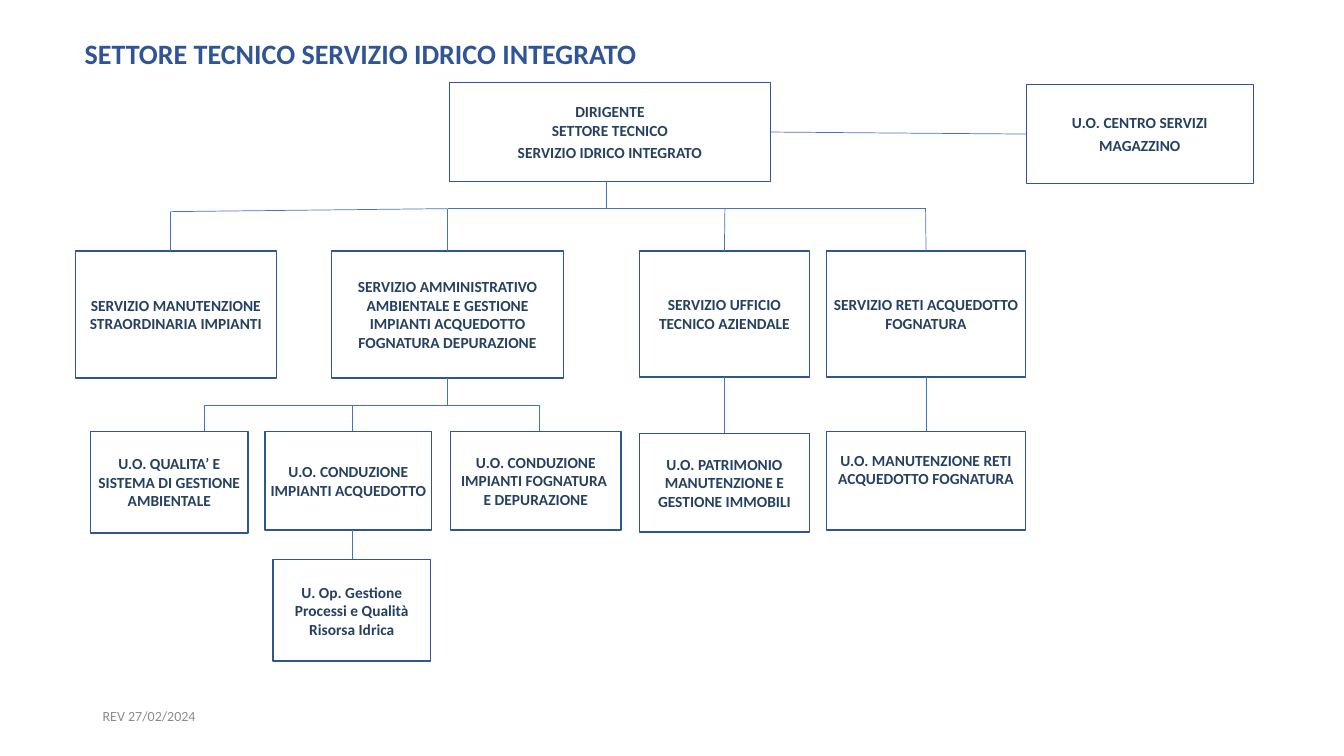
from typing import NamedTuple

from lxml import etree
from pptx import Presentation
from pptx.dml.color import RGBColor
from pptx.enum.shapes import MSO_CONNECTOR, MSO_SHAPE
from pptx.enum.text import MSO_ANCHOR, PP_ALIGN
from pptx.oxml.ns import qn
from pptx.util import Inches, Pt

WHITE = RGBColor(0xFF, 0xFF, 0xFF)
BORDER_BLUE = RGBColor(0x2F, 0x55, 0x97)
LINE_BLUE = RGBColor(0x44, 0x72, 0xC4)
TEXT_NAVY = RGBColor(0x25, 0x40, 0x61)
FOOTER_GRAY = RGBColor(0x8C, 0x8C, 0x8C)
FONT = "Calibri"
TOP, LEFT, BOTTOM, RIGHT = range(4)


class Box(NamedTuple):
    left: float
    top: float
    width: float
    height: float

    def inner(self, left, top, width, height):
        """Box whose left and top are measured from this box."""
        return Box(self.left + left, self.top + top, width, height)

    def point(self, x, y):
        return self.left + x, self.top + y

    def lengths(self):
        return [Inches(value) for value in self]


def style_font(font, size, color, bold):
    font.name = FONT
    font.size = Pt(size)
    font.bold = bold
    font.color.rgb = color


def add_unit(slide, box, text, wrap=True, bottom_inset=0.05):
    """Framed organisation unit; each line of text is a paragraph."""
    shape = slide.shapes.add_shape(MSO_SHAPE.RECTANGLE, *box.lengths())
    shape.shadow.inherit = False
    shape.fill.solid()
    shape.fill.fore_color.rgb = WHITE
    shape.line.color.rgb = BORDER_BLUE
    shape.line.width = Pt(1)
    frame = shape.text_frame
    frame.word_wrap = wrap
    frame.vertical_anchor = MSO_ANCHOR.MIDDLE
    frame.margin_left = frame.margin_right = frame.margin_top = Inches(0.05)
    frame.margin_bottom = Inches(bottom_inset)
    frame.text = text
    for paragraph in frame.paragraphs:
        paragraph.alignment = PP_ALIGN.CENTER
        paragraph.space_after = Pt(3)
        style_font(paragraph.font, 11, TEXT_NAVY, True)
    return shape


def add_line(slide, start, end, begin_at=None, end_at=None):
    """Thin line; begin_at and end_at are (shape, side) pairs to join."""
    points = [Inches(value) for value in (*start, *end)]
    line = slide.shapes.add_connector(MSO_CONNECTOR.STRAIGHT, *points)
    line.line.color.rgb = LINE_BLUE
    line.line.width = Pt(0.5)
    etree.SubElement(line._element.spPr, qn("a:effectLst"))
    if begin_at:
        line.begin_connect(*begin_at)
    if end_at:
        line.end_connect(*end_at)


def add_text(slide, box, text, size, color, bold, left_inset):
    frame = slide.shapes.add_textbox(*box.lengths()).text_frame
    frame.word_wrap = True
    frame.vertical_anchor = MSO_ANCHOR.MIDDLE
    frame.margin_left = Inches(left_inset)
    frame.text = text
    style_font(frame.paragraphs[0].font, size, color, bold)


def add_management(slide, box):
    director = add_unit(
        slide, box.inner(0, 0, 3.18, 0.98),
        "DIRIGENTE\vSETTORE TECNICO\nSERVIZIO IDRICO INTEGRATO", wrap=False)
    warehouse = add_unit(slide, box.inner(5.72, 0.02, 2.25, 0.98),
                         "U.O. CENTRO SERVIZI\nMAGAZZINO", wrap=False)
    add_line(slide, box.point(3.18, 0.5), box.point(5.72, 0.5),
             (director, RIGHT), (warehouse, LEFT))
    add_line(slide, box.point(1.55, 0.98), box.point(1.55, 1.25))


def add_services(slide, box):
    """Four services hanging from a common line; returns their shapes."""
    row = 0.42
    maintenance, administration, office, networks = [
        add_unit(slide, box.inner(left, row, width, height), text)
        for left, width, height, text in (
            (0, 1.99, 1.26, "SERVIZIO MANUTENZIONE STRAORDINARIA IMPIANTI"),
            (2.54, 2.3, 1.26, "SERVIZIO AMMINISTRATIVO AMBIENTALE E GESTIONE "
                              "IMPIANTI ACQUEDOTTO FOGNATURA DEPURAZIONE"),
            (5.59, 1.69, 1.25, "SERVIZIO UFFICIO TECNICO AZIENDALE"),
            (7.45, 1.97, 1.25, "SERVIZIO RETI ACQUEDOTTO FOGNATURA"),
        )]
    add_line(slide, box.point(0.94, 0.03), box.point(3.69, 0))
    add_line(slide, box.point(3.69, 0), box.point(8.43, 0))
    add_line(slide, box.point(0.94, 0.03), box.point(0.94, row))
    for x, service in ((3.69, administration), (6.44, office), (8.43, networks)):
        add_line(slide, box.point(x, 0), box.point(x, row),
                 end_at=(service, TOP))
    return administration, office, networks


def add_operating_units(slide, box, administration, office, networks):
    row = 0.26
    add_unit(slide, box.inner(0, row, 1.56, 1.01),
             "U.O. QUALITA’ E SISTEMA DI GESTIONE AMBIENTALE")
    add_unit(slide, box.inner(1.73, row, 1.65, 0.98),
             "U.O. CONDUZIONE IMPIANTI ACQUEDOTTO")
    add_unit(slide, box.inner(3.57, row, 1.69, 0.98),
             "U.O. CONDUZIONE IMPIANTI FOGNATURA  E DEPURAZIONE")
    property_unit = add_unit(slide, box.inner(5.44, 0.28, 1.69, 0.98),
                             "U.O. PATRIMONIO MANUTENZIONE E GESTIONE IMMOBILI")
    network_unit = add_unit(slide, box.inner(7.3, row, 1.97, 0.98),
                            "U.O. MANUTENZIONE RETI ACQUEDOTTO FOGNATURA",
                            bottom_inset=0.28)
    resource_unit = add_unit(slide, box.inner(1.81, 1.53, 1.56, 1.01),
                             "U. Op. Gestione Processi e Qualità Risorsa Idrica")

    add_line(slide, box.point(1.13, 0), box.point(4.45, 0))
    for x in (1.13, 2.59, 4.45):
        add_line(slide, box.point(x, 0), box.point(x, row))
    add_line(slide, box.point(3.54, 0), box.point(3.54, -row),
             end_at=(administration, BOTTOM))
    for x, service, unit in ((6.29, office, property_unit),
                             (8.28, networks, network_unit)):
        add_line(slide, box.point(x, -0.28), box.point(x, row),
                 (service, BOTTOM), (unit, TOP))
    add_line(slide, box.point(2.59, 1.24), box.point(2.59, 1.53),
             end_at=(resource_unit, TOP))


def main():
    presentation = Presentation()
    presentation.slide_width = Inches(13.33)
    presentation.slide_height = Inches(7.5)
    slide = presentation.slides.add_slide(presentation.slide_layouts[6])

    add_text(slide, Box(0.75, 0.28, 11.81, 0.5),
             "SETTORE TECNICO SERVIZIO IDRICO INTEGRATO",
             20, BORDER_BLUE, True, 0.09)
    add_management(slide, Box(4.46, 0.82, 7.97, 1.25))
    services = add_services(slide, Box(0.75, 2.07, 9.42, 1.68))
    add_operating_units(slide, Box(0.9, 4.02, 9.27, 2.54), *services)
    add_text(slide, Box(0.92, 6.86, 9.65, 0.49), "REV 27/02/2024",
             10, FOOTER_GRAY, False, 0.1)
    presentation.save("out.pptx")


if __name__ == "__main__":
    main()
